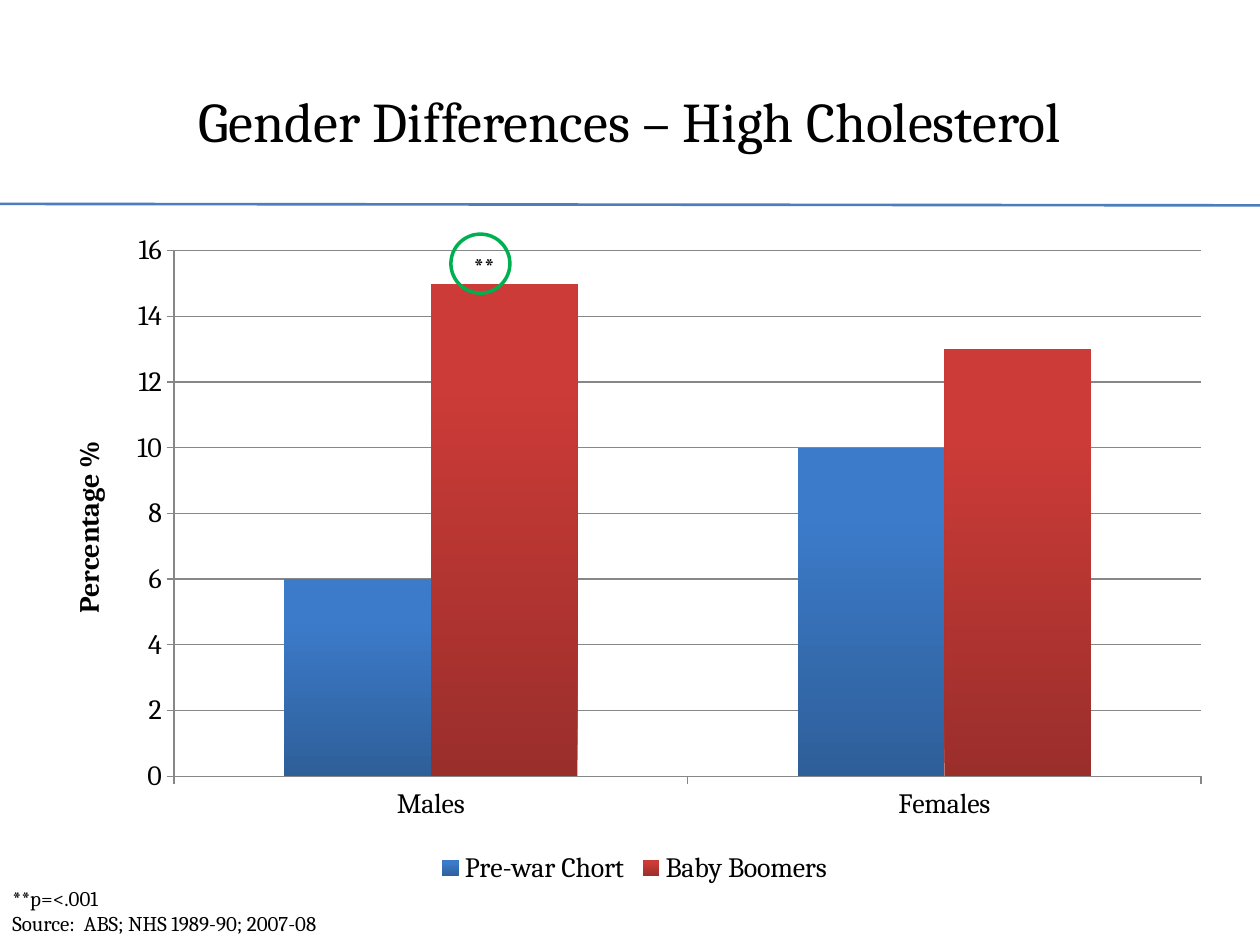
import pptx
import pptx.chart.data
import pptx.dml.color
import pptx.enum.chart
import pptx.enum.shapes
import pptx.enum.text
import pptx.oxml
import pptx.oxml.ns
import pptx.util

Cm = pptx.util.Cm
Pt = pptx.util.Pt
RGBColor = pptx.dml.color.RGBColor

BLACK = RGBColor(0x00, 0x00, 0x00)
GREY = RGBColor(0x87, 0x87, 0x87)
RULE = RGBColor(0x4B, 0x7E, 0xBC)
GREEN = RGBColor(0x00, 0xB0, 0x50)
# Dark foot and light top of each column
BLUES = RGBColor(0x2E, 0x5F, 0x99), RGBColor(0x3C, 0x7B, 0xCA)
REDS = RGBColor(0x9A, 0x2E, 0x2B), RGBColor(0xCC, 0x3B, 0x37)


class Deck:
    """Holds the style and the current slide."""

    face = "Cambria"

    def __init__(self):
        self.file = pptx.Presentation()
        self.file.slide_width = Cm(25.4)
        self.file.slide_height = Cm(19.05)
        self.slide = self.file.slides.add_slide(self.file.slide_layouts[5])

    def style(self, font, size, bold=False):
        font.name = self.face
        font.size = Pt(size)
        font.bold = bold
        font.color.rgb = BLACK

    def title(self, text, box):
        shape = self.slide.shapes.title
        shape.left, shape.top, shape.width, shape.height = map(Cm, box)
        frame = shape.text_frame
        frame.text = text
        frame.vertical_anchor = pptx.enum.text.MSO_ANCHOR.MIDDLE
        line = frame.paragraphs[0]
        line.alignment = pptx.enum.text.PP_ALIGN.CENTER
        self.style(line.font, 32)

    def text(self, text, size, box):
        frame = self.slide.shapes.add_textbox(*map(Cm, box)).text_frame
        frame.word_wrap = True
        frame.text = text
        for line in frame.paragraphs:
            self.style(line.font, size)

    def rule(self, ends, color, width):
        line = self.slide.shapes.add_connector(
            pptx.enum.shapes.MSO_CONNECTOR.STRAIGHT, *map(Cm, ends))
        line.line.color.rgb = color
        line.line.width = Pt(width)
        line._element.spPr.append(pptx.oxml.parse_xml(
            "<a:effectLst %s/>" % pptx.oxml.ns.nsdecls("a")))

    def ring(self, box, color, width):
        ring = self.slide.shapes.add_shape(
            pptx.enum.shapes.MSO_SHAPE.OVAL, *map(Cm, box))
        ring.shadow.inherit = False
        ring.fill.background()
        ring.line.color.rgb = color
        ring.line.width = Pt(width)

    def columns(self, cats, series, label, box, plot):
        data = pptx.chart.data.CategoryChartData()
        data.categories = cats
        for name, vals, _ in series:
            data.add_series(name, vals)
        kinds = pptx.enum.chart
        chart = self.slide.shapes.add_chart(
            kinds.XL_CHART_TYPE.COLUMN_CLUSTERED, *map(Cm, box), data).chart
        self.style(chart.font, 16)
        chart.has_title = False
        chart.has_legend = True
        chart.legend.position = kinds.XL_LEGEND_POSITION.BOTTOM
        chart.legend.include_in_layout = False
        self.style(chart.legend.font, 16)

        bars = chart.plots[0]
        bars.gap_width = 150
        bars.overlap = 0
        bars.vary_by_categories = False
        for bar, (_, _, shades) in zip(bars.series, series):
            self.shade(bar.format.fill, shades)

        for axis in (chart.category_axis, chart.value_axis):
            axis.major_tick_mark = kinds.XL_TICK_MARK.OUTSIDE
            axis.minor_tick_mark = kinds.XL_TICK_MARK.NONE
            axis.format.line.color.rgb = GREY
            self.style(axis.tick_labels.font, 16)
        axis = chart.value_axis
        axis.minimum_scale, axis.maximum_scale, axis.major_unit = 0, 16, 2
        axis.has_major_gridlines = True
        axis.major_gridlines.format.line.color.rgb = GREY
        frame = axis.axis_title.text_frame
        frame.text = label
        frame._txBody.bodyPr.set("rot", "-5400000")
        frame._txBody.bodyPr.set("vert", "horz")
        self.style(frame.paragraphs[0].font, 16, True)
        self.place(chart, plot)

    def shade(self, fill, shades):
        fill.gradient()
        fill.gradient_angle = 90
        for stop, color, spot in zip(fill.gradient_stops, shades, (0, 0.8)):
            stop.color.rgb = color
            stop.position = spot

    def place(self, chart, plot):
        """Fix the inner plot area, given as shares of the chart."""
        area = chart._chartSpace.xpath("c:chart/c:plotArea")[0]
        for old in area.xpath("c:layout"):
            area.remove(old)
        spots = "".join('<c:%s val="%s"/>' % pair for pair in zip("xywh", plot))
        area.insert(0, pptx.oxml.parse_xml(
            '<c:layout %s><c:manualLayout><c:layoutTarget val="inner"/>'
            '<c:xMode val="edge"/><c:yMode val="edge"/>%s'
            "</c:manualLayout></c:layout>"
            % (pptx.oxml.ns.nsdecls("c"), spots)))


def main():
    deck = Deck()
    deck.title("Gender Differences – High Cholesterol", (1.27, 0.91, 22.86, 3.02))
    deck.rule((0, 4.11, 25.4, 4.14), RULE, 1.5)
    deck.columns(
        ("Males", "Females"),
        (("Pre-war Chort", (6, 10), BLUES), ("Baby Boomers", (15, 13), REDS)),
        "Percentage %",
        (0.89, 4.52, 23.8, 13.41),
        (0.11, 0.04, 0.87, 0.79))
    deck.text("**", 14, (9.3, 4.93, 2.21, 0.86))
    deck.text("**p=<.001\nSource:  ABS; NHS 1989-90; 2007-08", 12,
              (0, 17.73, 9.09, 1.27))
    deck.ring((9.09, 4.72, 1.19, 1.19), GREEN, 2)
    deck.file.save("out.pptx")


if __name__ == "__main__":
    main()
